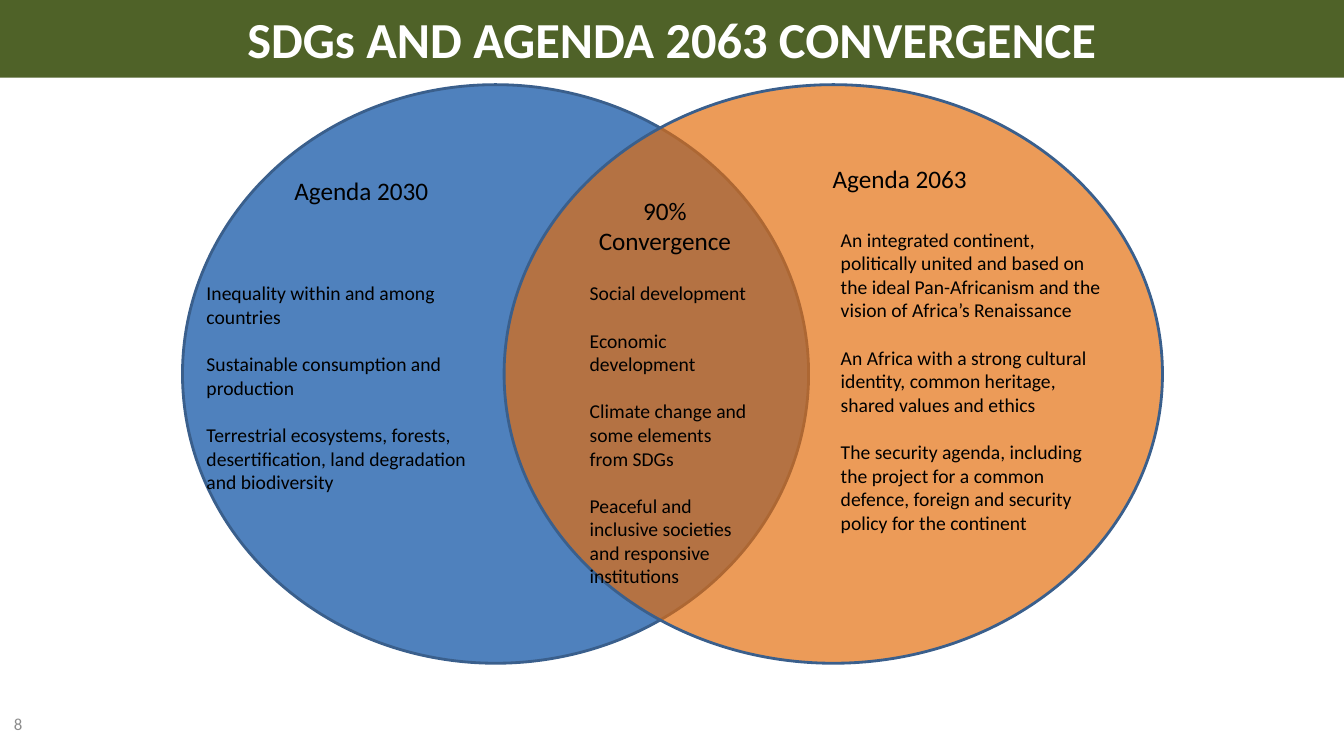
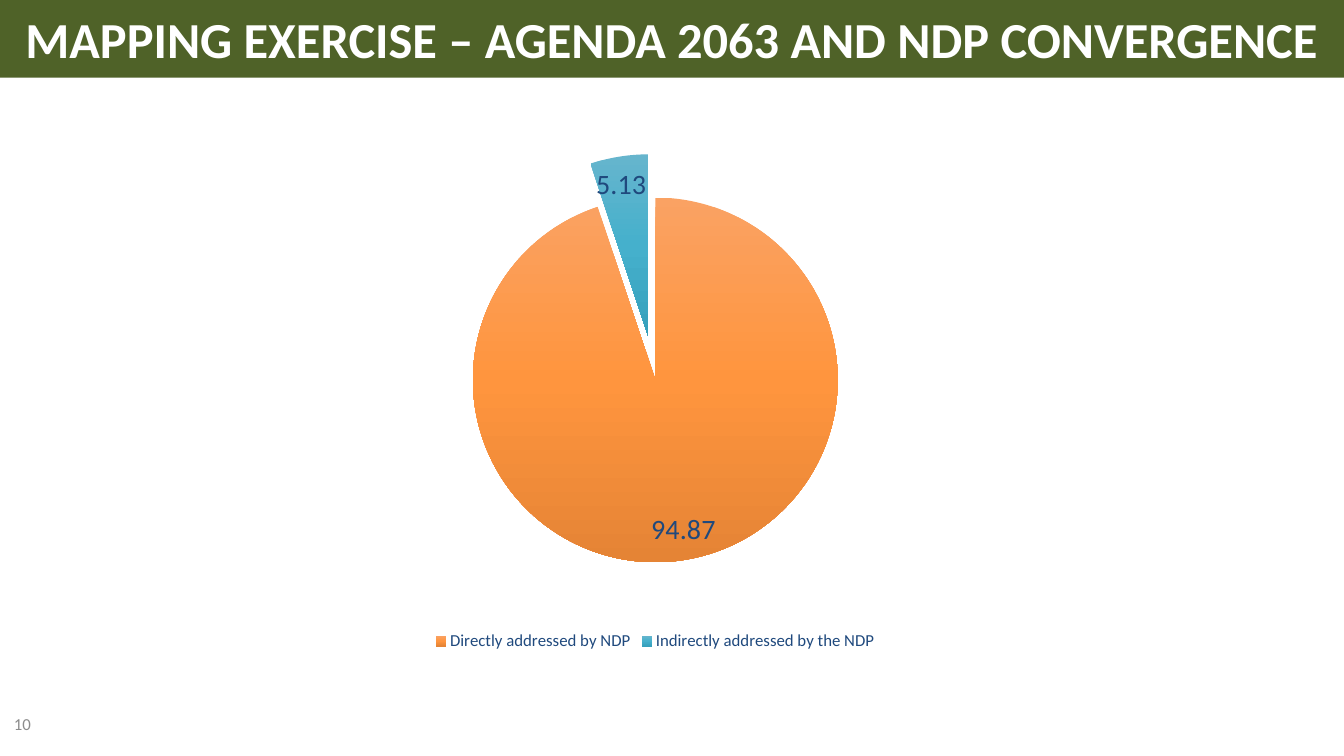
from copy import deepcopy
from dataclasses import dataclass

from lxml.etree import SubElement
from pptx import Presentation
from pptx.chart.data import CategoryChartData
from pptx.dml.color import RGBColor as RGB
from pptx.enum.chart import XL_CHART_TYPE as Kind
from pptx.enum.chart import XL_LABEL_POSITION as Spot
from pptx.enum.chart import XL_LEGEND_POSITION as Side
from pptx.enum.shapes import MSO_SHAPE as Shape
from pptx.enum.text import MSO_ANCHOR as Anchor
from pptx.enum.text import MSO_AUTO_SIZE as Fit
from pptx.enum.text import PP_ALIGN as Align
from pptx.oxml.ns import qn
from pptx.util import Inches, Pt


@dataclass(frozen=True)
class Theme:
    font: str = "Calibri"
    band: str = "4F6228"
    white: str = "FFFFFF"
    black: str = "000000"
    gray: str = "8C8C8C"
    navy: str = "1F497D"
    blue: str = "4F81BD"
    orange: str = "E46C0A"
    rim: str = "3A5F8C"
    slices: tuple = (("FAA263", "FF953E", "E58435"),
                     ("66B5CD", "45B0CC", "36A0BC"))
    title: int = 36
    value: int = 20
    head: int = 18
    body: int = 14
    small: int = 12
    gap: int = 17


THEME = Theme()
WIDE, HIGH = 13.33, 7.5

GOALS = ["Inequality within and among countries",
         "Sustainable consumption and production",
         "Terrestrial ecosystems, forests, desertification, land degradation "
         "and biodiversity"]
SHARED = ["Social development",
          "Economic development",
          "Climate change and some elements from SDGs",
          "Peaceful and inclusive societies and responsive institutions"]
AIMS = ["An integrated continent, politically united and based on the ideal "
        "Pan-Africanism and the vision of Africa’s Renaissance",
        "An Africa with a strong cultural identity, common heritage, shared "
        "values and ethics",
        "The security agenda, including the project for a common defence, "
        "foreign and security policy for the continent"]


def style(font, size, color, bold=False):
    font.name = THEME.font
    font.size = Pt(size)
    font.bold = bold
    font.color.rgb = RGB.from_string(color)


def place(shape, *box):
    shape.left, shape.top, shape.width, shape.height = map(Inches, box)


def add_text(slide, box, lines, size, color=THEME.black, align=Align.LEFT,
             anchor=Anchor.TOP):
    frame = slide.shapes.add_textbox(*map(Inches, box)).text_frame
    frame.word_wrap = True
    frame.vertical_anchor = anchor
    frame.text = "\n".join(lines)
    for i, para in enumerate(frame.paragraphs):
        para.alignment = align
        para.space_before = Pt(THEME.gap if i else 0)
        style(para.font, size, color)


def add_slide(deck, title, number):
    """Add a slide with the title band and the page number."""
    slide = deck.slides.add_slide(deck.slide_layouts[5])
    band = slide.shapes.title
    place(band, 0, 0, WIDE, 0.77)
    band.fill.solid()
    band.fill.fore_color.rgb = RGB.from_string(THEME.band)
    frame = band.text_frame
    frame.text = title
    frame.auto_size = Fit.NONE
    frame.vertical_anchor = Anchor.MIDDLE
    para = frame.paragraphs[0]
    para.alignment = Align.CENTER
    style(para.font, THEME.title, THEME.white, True)
    add_text(slide, (0.04, 6.98, 3.11, 0.4), [number], THEME.small,
             THEME.gray, anchor=Anchor.MIDDLE)
    return slide


def add_oval(slide, box, color, alpha=100):
    oval = slide.shapes.add_shape(Shape.OVAL, *map(Inches, box))
    oval.shadow.inherit = False
    oval.fill.solid()
    oval.fill.fore_color.rgb = RGB.from_string(color)
    oval.line.color.rgb = RGB.from_string(THEME.rim)
    oval.line.width = Pt(2)
    if alpha < 100:
        tint = oval.fill._xPr.find(qn("a:solidFill"))[0]
        SubElement(tint, qn("a:alpha")).set("val", str(alpha * 1000))


def shade(point, colors):
    """Fill a slice from top to bottom with evenly spaced colours."""
    fill = point.format.fill
    fill.gradient()
    fill.gradient_angle = 270
    stops = fill._xPr.find(qn("a:gradFill")).find(qn("a:gsLst"))
    while len(stops) < len(colors):
        stops.append(deepcopy(stops[-1]))
    for i, (stop, color) in enumerate(zip(fill.gradient_stops, colors)):
        stop.position = i / (len(colors) - 1)
        stop.color.rgb = RGB.from_string(color)
    point.format.line.fill.background()


def explode(series, index, amount):
    """Pull a formatted slice out by a percentage of the radius."""
    slot = series._element.findall(qn("c:dPt"))[index]
    node = SubElement(slot, qn("c:explosion"))
    node.set("val", str(amount))
    slot.find(qn("c:spPr")).addprevious(node)


def add_pie(slide, box, shares):
    data = CategoryChartData(number_format="0.00")
    data.categories = list(shares)
    data.add_series("Series 1", shares.values())
    chart = slide.shapes.add_chart(Kind.PIE, *map(Inches, box), data).chart
    chart.has_title = False
    style(chart.font, THEME.small, THEME.navy)
    chart.has_legend = True
    chart.legend.position = Side.BOTTOM
    chart.legend.include_in_layout = False
    style(chart.legend.font, THEME.small, THEME.navy)
    plot = chart.plots[0]
    plot.vary_by_categories = True
    plot.has_data_labels = True
    labels = plot.data_labels
    labels.show_value = True
    labels.show_percentage = False
    labels.position = Spot.BEST_FIT
    style(labels.font, THEME.value, THEME.navy)
    series = plot.series[0]
    for i, colors in enumerate(THEME.slices):
        shade(series.points[i], colors)
    explode(series, 1, 24)


def add_venn(slide):
    add_oval(slide, (1.81, 0.84, 6.21, 5.74), THEME.blue)
    add_oval(slide, (5, 0.84, 6.53, 5.74), THEME.orange, 68)
    lists = [((1.95, 2.74, 3.03, 2.1), GOALS),
             ((8.24, 2.21, 2.89, 3), AIMS),
             ((5.75, 2.74, 1.79, 3), SHARED)]
    for box, lines in lists:
        add_text(slide, box, lines, THEME.body)
    heads = [((2.82, 1.69, 1.68, 0.38), "Agenda 2030", Align.LEFT),
             ((8.16, 1.57, 1.8, 0.38), "Agenda 2063", Align.LEFT),
             ((5.78, 1.89, 1.63, 0.67), "90% Convergence", Align.CENTER)]
    for box, head, align in heads:
        add_text(slide, box, [head], THEME.head, align=align)


def main():
    deck = Presentation()
    deck.slide_width, deck.slide_height = Inches(WIDE), Inches(HIGH)
    add_venn(add_slide(deck, "SDGs AND AGENDA 2063 CONVERGENCE", "8"))
    slide = add_slide(
        deck, "MAPPING EXERCISE – AGENDA 2063 AND NDP CONVERGENCE", "10")
    add_pie(slide, (2.25, 1, 8.5, 5.5),
            {"Directly addressed by NDP": 94.87,
             "Indirectly addressed by the NDP": 5.13})
    deck.save("out.pptx")


if __name__ == "__main__":
    main()
